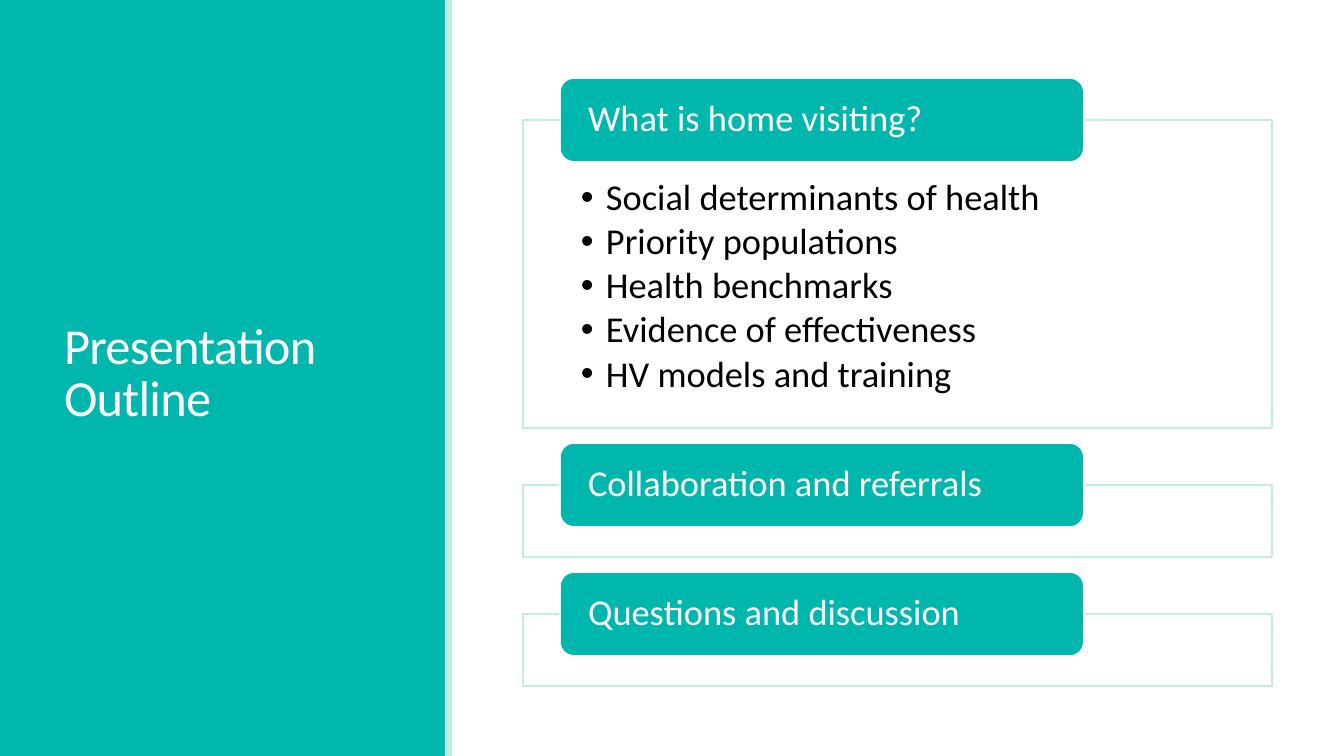
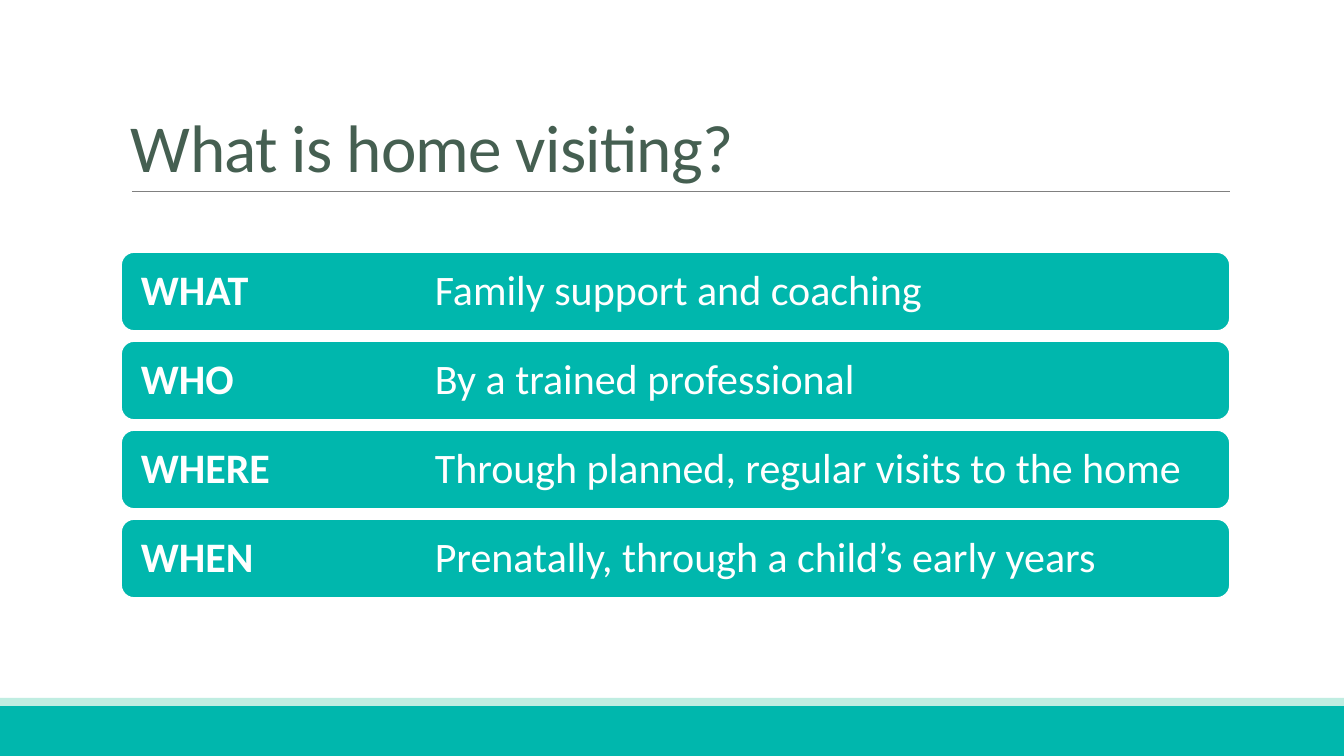
from dataclasses import dataclass

import lxml.etree
import pptx
import pptx.dml.color
import pptx.enum.shapes
import pptx.enum.text
import pptx.oxml.ns
import pptx.util
from pptx.shapes.autoshape import Shape
from pptx.slide import Slide
from pptx.text.text import TextFrame, _Paragraph

SLIDE_WIDTH, SLIDE_HEIGHT = 1344, 756
EMU_PER_PX = 12192000 / SLIDE_WIDTH
RECTANGLE = pptx.enum.shapes.MSO_SHAPE.RECTANGLE
ROUNDED = pptx.enum.shapes.MSO_SHAPE.ROUNDED_RECTANGLE
Anchor = pptx.enum.text.MSO_ANCHOR


@dataclass(frozen=True)
class Theme:
    font: str = "Calibri"
    teal: str = "00B7AD"
    mint: str = "BFEDE1"
    white: str = "FFFFFF"
    black: str = "000000"
    heading: str = "455F51"
    rule: str = "808080"
    panel_title_size: int = 36
    title_size: int = 48
    outline_size: int = 26
    row_size: int = 30
    border: float = 1.25
    rule_width: float = 0.5


@dataclass(frozen=True)
class Box:
    left: int
    top: int
    width: int
    height: int


@dataclass(frozen=True)
class Section:
    heading: str
    height: int
    points: tuple[str, ...] = ()


@dataclass(frozen=True)
class Answer:
    question: str
    reply: str


THEME = Theme()

SECTIONS = (
    Section("What is home visiting?", 308, (
        "Social determinants of health",
        "Priority populations",
        "Health benchmarks",
        "Evidence of effectiveness",
        "HV models and training",
    )),
    Section("Collaboration and referrals", 72),
    Section("Questions and discussion", 72),
)

ANSWERS = (
    Answer("WHAT", "Family support and coaching"),
    Answer("WHO", "By a trained professional"),
    Answer("WHERE", "Through planned, regular visits to the home"),
    Answer("WHEN", "Prenatally, through a child’s early years"),
)


def px(length: int) -> int:
    return round(length * EMU_PER_PX)


def rgb(color: str) -> pptx.dml.color.RGBColor:
    return pptx.dml.color.RGBColor.from_string(color)


def place(shape: Shape, box: Box) -> None:
    shape.left, shape.top = px(box.left), px(box.top)
    shape.width, shape.height = px(box.width), px(box.height)


def add_box(slide: Slide, box: Box, fill: str, *, preset=RECTANGLE, border: str | None = None) -> Shape:
    shape = slide.shapes.add_shape(preset, px(box.left), px(box.top), px(box.width), px(box.height))
    shape.shadow.inherit = False
    shape.fill.solid()
    shape.fill.fore_color.rgb = rgb(fill)
    if border:
        shape.line.color.rgb = rgb(border)
        shape.line.width = pptx.util.Pt(THEME.border)
    else:
        shape.line.fill.background()
    return shape


def set_frame(frame: TextFrame, anchor: Anchor, *, side: int, top: int = 0, bottom: int = 0) -> None:
    frame.word_wrap = True
    frame.auto_size = pptx.enum.text.MSO_AUTO_SIZE.NONE
    frame.vertical_anchor = anchor
    frame.margin_left = frame.margin_right = px(side)
    frame.margin_top, frame.margin_bottom = px(top), px(bottom)


def write_text(paragraph: _Paragraph, text: str, *, size: int, color: str, bold: bool = False,
               tracking: int = 0, line_spacing: float = 0.9, space_after: float = 0) -> None:
    paragraph.alignment = pptx.enum.text.PP_ALIGN.LEFT
    paragraph.line_spacing = line_spacing
    paragraph.space_after = pptx.util.Pt(space_after)
    run = paragraph.add_run()
    run.text = text
    run.font.name = THEME.font
    run.font.size = pptx.util.Pt(size)
    run.font.bold = bold
    run.font.color.rgb = rgb(color)
    if tracking:
        run.font._element.set("spc", str(tracking))


def add_child(parent, tag: str, **attributes: str):
    return lxml.etree.SubElement(parent, pptx.oxml.ns.qn(tag), attributes)


def add_bullet(paragraph: _Paragraph, indent: int) -> None:
    properties = paragraph._p.get_or_add_pPr()
    properties.set("marL", str(px(indent)))
    properties.set("indent", str(-px(indent)))
    add_child(properties, "a:buFont", typeface="Arial")
    add_child(properties, "a:buChar", char="•")


def add_tab_stop(paragraph: _Paragraph, position: int) -> None:
    stops = add_child(paragraph._p.get_or_add_pPr(), "a:tabLst")
    add_child(stops, "a:tab", pos=str(px(position)), algn="l")


def add_band(slide: Slide, band: Box, edge: Box) -> None:
    add_box(slide, band, THEME.teal)
    add_box(slide, edge, THEME.mint)


def set_title(slide: Slide, text: str, box: Box, anchor: Anchor, *, size: int, color: str) -> None:
    title = slide.shapes.title
    slide.shapes._spTree.append(title._element)
    place(title, box)
    set_frame(title.text_frame, anchor, side=10, top=5, bottom=5)
    write_text(title.text_frame.paragraphs[0], text, size=size, color=color,
               tracking=-50, line_spacing=0.85)


def add_section(slide: Slide, section: Section, top: int) -> None:
    body = add_box(slide, Box(523, top, 749, section.height), THEME.white, border=THEME.mint)
    if section.points:
        frame = body.text_frame
        set_frame(frame, Anchor.TOP, side=58, top=59, bottom=20)
        for index, point in enumerate(section.points):
            paragraph = frame.add_paragraph() if index else frame.paragraphs[0]
            write_text(paragraph, point, size=THEME.outline_size, color=THEME.black, space_after=3.5)
            add_bullet(paragraph, 25)
    header = add_box(slide, Box(560, top - 42, 524, 84), THEME.teal, preset=ROUNDED, border=THEME.white)
    set_frame(header.text_frame, Anchor.MIDDLE, side=24)
    write_text(header.text_frame.paragraphs[0], section.heading,
               size=THEME.outline_size, color=THEME.white)


def add_answer(slide: Slide, answer: Answer, top: int) -> None:
    row = add_box(slide, Box(121, top, 1109, 79), THEME.teal, preset=ROUNDED, border=THEME.white)
    set_frame(row.text_frame, Anchor.MIDDLE, side=16)
    paragraph = row.text_frame.paragraphs[0]
    write_text(paragraph, answer.question, size=THEME.row_size, color=THEME.white, bold=True)
    write_text(paragraph, "\t" + answer.reply, size=THEME.row_size, color=THEME.white)
    add_tab_stop(paragraph, 294)


def add_rule(slide: Slide, left: int, right: int, y: int) -> None:
    rule = slide.shapes.add_connector(pptx.enum.shapes.MSO_CONNECTOR.STRAIGHT,
                                      px(left), px(y), px(right), px(y))
    rule.line.color.rgb = rgb(THEME.rule)
    rule.line.width = pptx.util.Pt(THEME.rule_width)
    add_child(rule._element.spPr, "a:effectLst")


def build_outline(slide: Slide) -> None:
    add_band(slide, Box(0, 0, 446, SLIDE_HEIGHT), Box(445, 0, 7, SLIDE_HEIGHT))
    set_title(slide, "Presentation Outline", Box(54, 57, 340, 636), Anchor.MIDDLE,
              size=THEME.panel_title_size, color=THEME.white)
    top, gap = 120, 57
    for section in SECTIONS:
        add_section(slide, section, top)
        top += section.height + gap


def build_definition(slide: Slide) -> None:
    add_band(slide, Box(0, 706, SLIDE_WIDTH, 50), Box(0, 698, SLIDE_WIDTH, 8))
    add_rule(slide, 132, 1230, 191)
    set_title(slide, "What is home visiting?", Box(121, 31, 1109, 160), Anchor.BOTTOM,
              size=THEME.title_size, color=THEME.heading)
    for index, answer in enumerate(ANSWERS):
        add_answer(slide, answer, 252 + 89 * index)


def main() -> None:
    deck = pptx.Presentation()
    deck.slide_width, deck.slide_height = px(SLIDE_WIDTH), px(SLIDE_HEIGHT)
    title_only = deck.slide_layouts[5]
    for build in (build_outline, build_definition):
        build(deck.slides.add_slide(title_only))
    deck.save("out.pptx")


if __name__ == "__main__":
    main()
